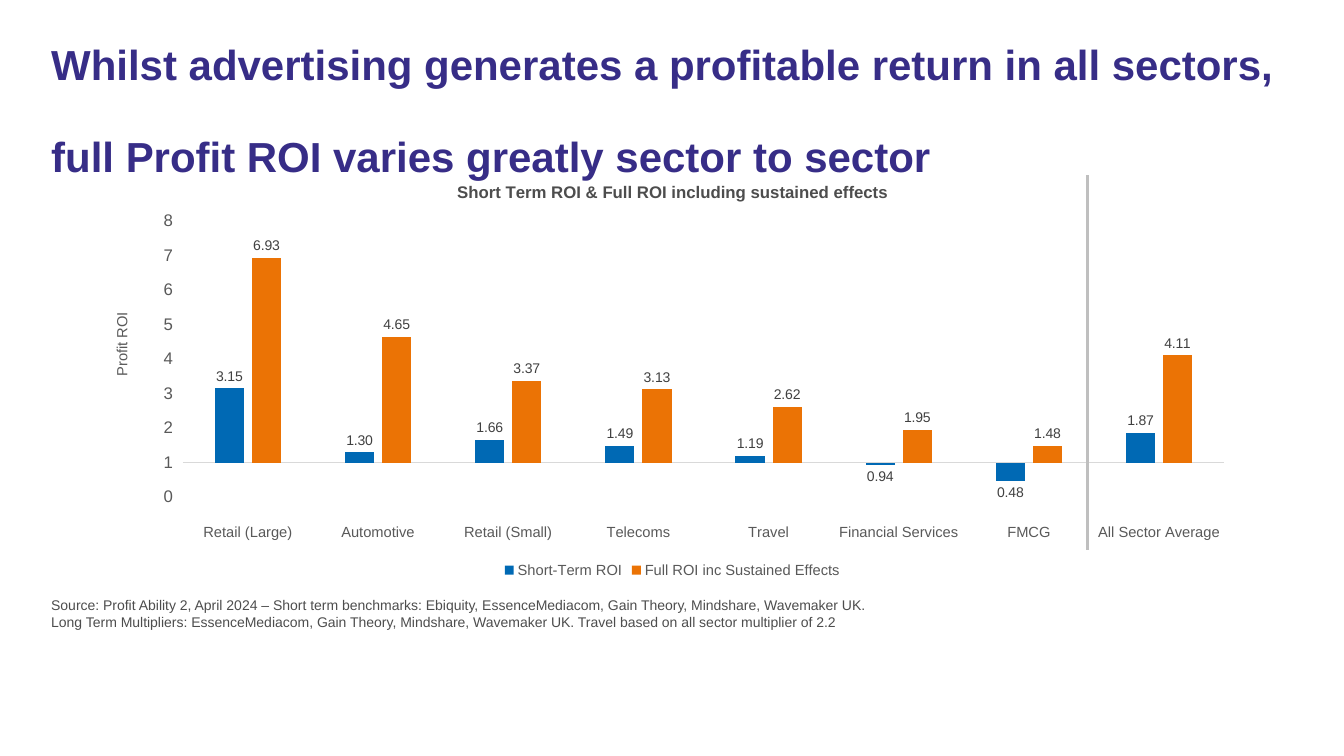
from pptx import Presentation
from pptx.chart.data import CategoryChartData as Data
from pptx.dml.color import RGBColor as RGB
from pptx.enum.chart import XL_CHART_TYPE as Kind, XL_LABEL_POSITION as Spot
from pptx.enum.chart import XL_LEGEND_POSITION as Side, XL_TICK_LABEL_POSITION as Tick
from pptx.enum.chart import XL_TICK_MARK as Mark
from pptx.enum.shapes import MSO_CONNECTOR as Link
from pptx.oxml import parse_xml
from pptx.oxml.ns import nsdecls, qn
from pptx.util import Inches, Pt

HUES = {"title": "372D87", "text": "4D4D4D", "axis": "595959", "label": "404040",
        "grid": "D9D9D9", "rule": "BFBFBF", "short": "0069B4", "full": "EB7305"}
SECTORS = ["Retail (Large)", "Automotive", "Retail (Small)", "Telecoms", "Travel",
           "Financial Services", "FMCG", "All Sector Average"]
SERIES = [
    ("Short-Term ROI", "short", [3.15, 1.30, 1.66, 1.49, 1.19, 0.94, 0.48, 1.87]),
    ("Full ROI inc Sustained Effects", "full",
     [6.93, 4.65, 3.37, 3.13, 2.62, 1.95, 1.48, 4.11]),
]
TITLE = ["Whilst advertising generates a profitable return in all sectors,",
         "full Profit ROI varies greatly sector to sector"]
SOURCE = [
    "Source: Profit Ability 2, April 2024 – Short term benchmarks: Ebiquity, "
    "EssenceMediacom, Gain Theory, Mindshare, Wavemaker UK.",
    "Long Term Multipliers: EssenceMediacom, Gain Theory, Mindshare, Wavemaker UK. "
    "Travel based on all sector multiplier of 2.2",
]


def hue(name):
    return RGB.from_string(HUES[name])


def style(font, size, color, bold=False):
    font.name, font.size, font.bold = "Arial", Pt(size), bold
    font.color.rgb = hue(color)


def add_text(slide, box, lines, size, color, bold=False, ratio=1.0, gap=0):
    frame = slide.shapes.add_textbox(*map(Inches, box)).text_frame
    frame.word_wrap = True
    for i, line in enumerate(lines):
        para = frame.paragraphs[0] if i == 0 else frame.add_paragraph()
        para.text = line
        para.line_spacing = ratio
        para.space_before = Pt(gap if i else 0)
        style(para.font, size, color, bold)


def place(part, x, y, w=None, h=None, inner=False):
    """Fix a chart part at fractions of the chart's size."""
    for old in part.findall(qn("c:layout")):
        part.remove(old)
    rows = [("xMode", "edge"), ("yMode", "edge"), ("x", x), ("y", y), ("w", w), ("h", h)]
    if inner:
        rows.insert(0, ("layoutTarget", "inner"))
    body = "".join(f'<c:{k} val="{v}"/>' for k, v in rows if v is not None)
    layout = parse_xml(f'<c:layout {nsdecls("c")}><c:manualLayout>{body}'
                       '</c:manualLayout></c:layout>')
    text = part.find(qn("c:tx"))
    if text is None:
        part.insert(0, layout)
    else:
        text.addnext(layout)


def set_title(owner, title, text, size, color, bold, x, y):
    para = title.text_frame.paragraphs[0]
    para.text = text
    style(para.font, size, color, bold)
    place(title._element, x, y)


def set_axes(chart):
    cats, vals = chart.category_axis, chart.value_axis
    for axis, size in ((cats, 10.5), (vals, 12)):
        axis.has_major_gridlines = False
        axis.major_tick_mark = axis.minor_tick_mark = Mark.NONE
        axis.tick_label_position = Tick.LOW
        style(axis.tick_labels.font, size, "axis")
    cats.format.line.color.rgb = hue("grid")
    cats.format.line.width = Pt(0.75)
    vals.format.line.fill.background()
    vals.minimum_scale, vals.maximum_scale, vals.major_unit = 0, 8, 1
    vals.crosses_at = 1  # break-even line
    vals.tick_labels.number_format = "0"
    vals.tick_labels.number_format_is_linked = False
    set_title(vals, vals.axis_title, "Profit ROI", 10.5, "axis", False, 0.01, 0.35)


def add_bars(slide, box):
    data = Data(number_format="0.00")
    data.categories = ["\n" + name for name in SECTORS]
    for name, _, values in SERIES:
        data.add_series(name, values)
    chart = slide.shapes.add_chart(Kind.COLUMN_CLUSTERED, *map(Inches, box), data).chart
    style(chart.font, 10, "label")
    chart.has_title = True
    set_title(chart, chart.chart_title, "Short Term ROI & Full ROI including sustained effects",
              12, "text", True, 0.31, 0.04)
    set_axes(chart)

    # Columns and their values
    plot = chart.plots[0]
    plot.gap_width, plot.overlap, plot.vary_by_categories = 219, -27, False
    for series, (_, color, _) in zip(plot.series, SERIES):
        series.invert_if_negative = False
        series.format.fill.solid()
        series.format.fill.fore_color.rgb = hue(color)
        labels = series.data_labels
        labels.show_value = True
        labels.position = Spot.OUTSIDE_END
        labels.number_format, labels.number_format_is_linked = "0.00", False
        style(labels.font, 10, "label")
    place(plot._element.getparent(), 0.074, 0.14, 0.906, 0.657, inner=True)

    # Legend
    chart.has_legend = True
    chart.legend.position = Side.BOTTOM
    chart.legend.include_in_layout = False
    style(chart.legend.font, 10.5, "axis")


def add_rule(slide, x, top, end):
    rule = slide.shapes.add_connector(Link.STRAIGHT, *map(Inches, (x, top, x, end)))
    rule.line.color.rgb = hue("rule")
    rule.line.width = Pt(2.25)
    rule._element.spPr.append(parse_xml(f'<a:effectLst {nsdecls("a")}/>'))


def main():
    deck = Presentation()
    deck.slide_width, deck.slide_height = Inches(13.33), Inches(7.5)
    slide = deck.slides.add_slide(deck.slide_layouts[6])
    left, wide = 0.41, 12.4
    add_text(slide, (left, 0.39, wide, 1.12), TITLE, 30, "title", True, 0.9, 33)
    add_text(slide, (left, 5.87, wide, 0.33), SOURCE, 10, "text")
    add_bars(slide, (0.97, 1.61, 11.4, 4.17))
    add_rule(slide, 10.79, 1.74, 5.46)  # sets the average apart
    deck.save("out.pptx")


if __name__ == "__main__":
    main()
